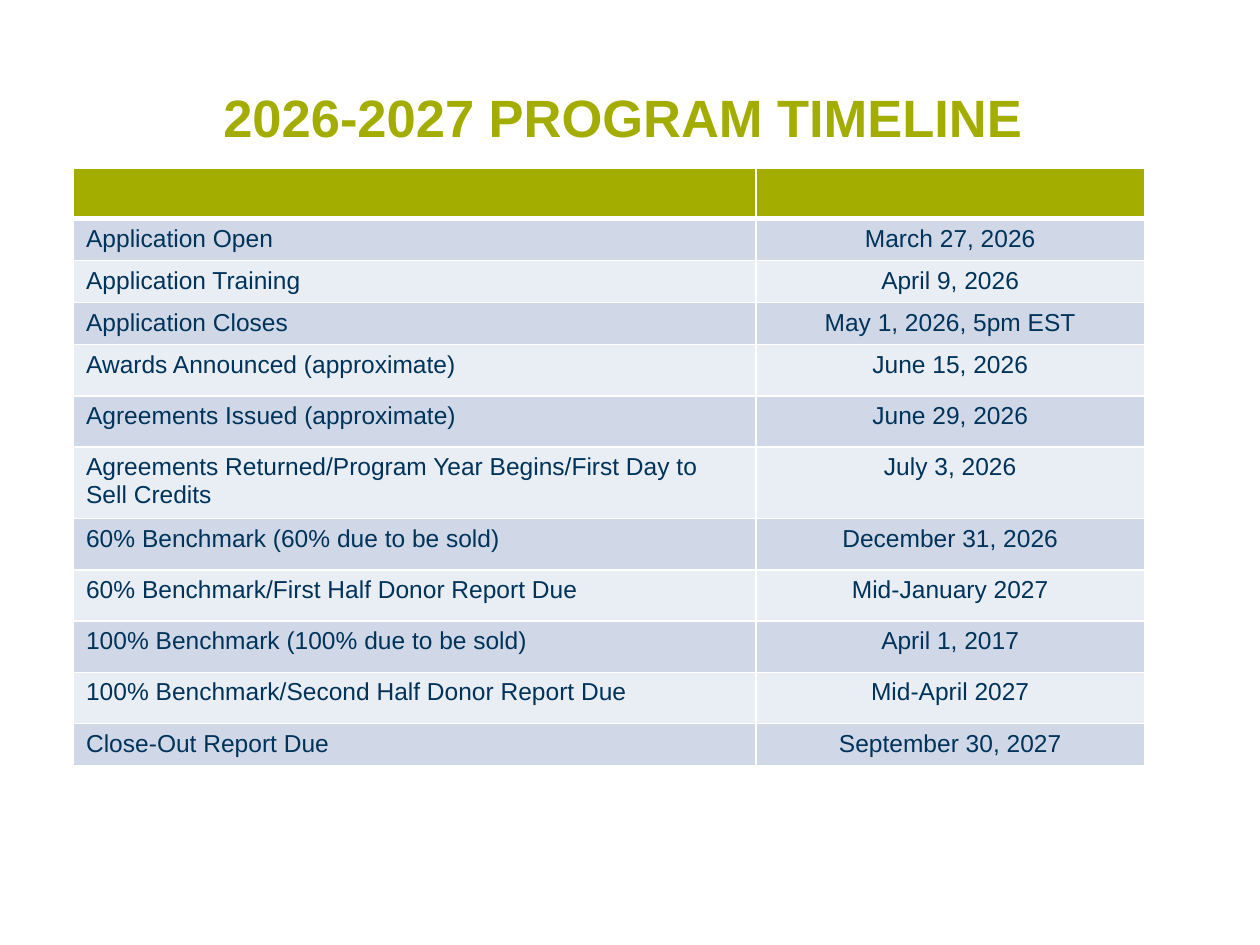
"""Build the program timeline slide."""
from dataclasses import dataclass

from lxml import etree
from pptx import Presentation
from pptx.dml.color import RGBColor
from pptx.enum.text import MSO_ANCHOR, PP_ALIGN
from pptx.oxml.ns import qn
from pptx.util import Pt

LEFT, CENTER = PP_ALIGN.LEFT, PP_ALIGN.CENTER
MIDDLE = MSO_ANCHOR.MIDDLE


@dataclass(frozen=True)
class Theme:
    font: str = "Arial"
    accent: str = "A2AD00"
    ink: str = "003359"
    bands: tuple = ("D0D8E8", "E9EDF4")
    border: str = "FFFFFF"
    title_size: int = 30
    body_size: int = 14
    header_size: int = 18
    rule: int = 1
    header_rule: int = 3


class Deck:
    def __init__(self, prs, theme):
        self.theme = theme
        self.s = prs.slides.add_slide(prs.slide_layouts[6])

    def run(self, p, text, size, color, bold=False):
        r = p.add_run()
        r.text = text
        r.font.name = self.theme.font
        r.font.size = Pt(size)
        r.font.bold = bold
        r.font.color.rgb = RGBColor.from_string(color)

    def title(self, text, x, y, w, h):
        tf = self.s.shapes.add_textbox(Pt(x), Pt(y), Pt(w), Pt(h)).text_frame
        tf.word_wrap = True
        tf.vertical_anchor = MIDDLE
        p = tf.paragraphs[0]
        p.alignment = CENTER
        self.run(p, text, self.theme.title_size, self.theme.accent, True)

    def borders(self, cell, top, bottom):
        tc_pr = cell._tc.get_or_add_tcPr()
        rule = self.theme.rule
        for side, width in zip("LRTB", (rule, rule, top, bottom)):
            ln = etree.SubElement(tc_pr, qn(f"a:ln{side}"), w=str(Pt(width)))
            fill = etree.SubElement(ln, qn("a:solidFill"))
            etree.SubElement(fill, qn("a:srgbClr"), val=self.theme.border)

    def cell(self, cell, text, fill, align, top, bottom):
        self.borders(cell, top, bottom)
        cell.fill.solid()
        cell.fill.fore_color.rgb = RGBColor.from_string(fill)
        p = cell.text_frame.paragraphs[0]
        p.alignment = align
        if text:
            self.run(p, text, self.theme.body_size, self.theme.ink)
        else:
            p.font.size = Pt(self.theme.header_size)

    def timeline(self, x, y, widths, header_height, events):
        t = self.theme
        rows = [("", "", header_height), *events]
        height = sum(row[-1] for row in rows)
        table = self.s.shapes.add_table(
            len(rows), len(widths), Pt(x), Pt(y), Pt(sum(widths)), Pt(height)
        ).table
        for column, width in zip(table.columns, widths):
            column.width = Pt(width)
        for i, (event, date, row_height) in enumerate(rows):
            table.rows[i].height = Pt(row_height)
            fill = t.bands[(i - 1) % 2] if i else t.accent
            top = t.header_rule if i == 1 else t.rule
            bottom = t.header_rule if i == 0 else t.rule
            for j, (text, align) in enumerate(((event, LEFT), (date, CENTER))):
                self.cell(table.cell(i, j), text, fill, align, top, bottom)


SHORT, TALL, WRAPPED = 23, 29.3, 38.5
EVENTS = [
    ("Application Open", "March 27, 2026", SHORT),
    ("Application Training", "April 9, 2026", SHORT),
    ("Application Closes", "May 1, 2026, 5pm EST", SHORT),
    ("Awards Announced (approximate)", "June 15, 2026", TALL),
    ("Agreements Issued (approximate)", "June 29, 2026", TALL),
    ("Agreements Returned/Program Year Begins/First Day to Sell Credits",
     "July 3, 2026", WRAPPED),
    ("60% Benchmark (60% due to be sold)", "December 31, 2026", TALL),
    ("60% Benchmark/First Half Donor Report Due", "Mid-January 2027", TALL),
    ("100% Benchmark (100% due to be sold)", "April 1, 2017", TALL),
    ("100% Benchmark/Second Half Donor Report Due", "Mid-April 2027", TALL),
    ("Close-Out Report Due", "September 30, 2027", SHORT),
]


def main():
    prs = Presentation()
    prs.slide_width, prs.slide_height = Pt(720), Pt(540)
    deck = Deck(prs, Theme())
    deck.title("2026-2027 PROGRAM TIMELINE", 26.6, 21.6, 658.8, 90)
    deck.timeline(42, 96, (390, 222), 28, EVENTS)
    prs.save("out.pptx")


if __name__ == "__main__":
    main()
